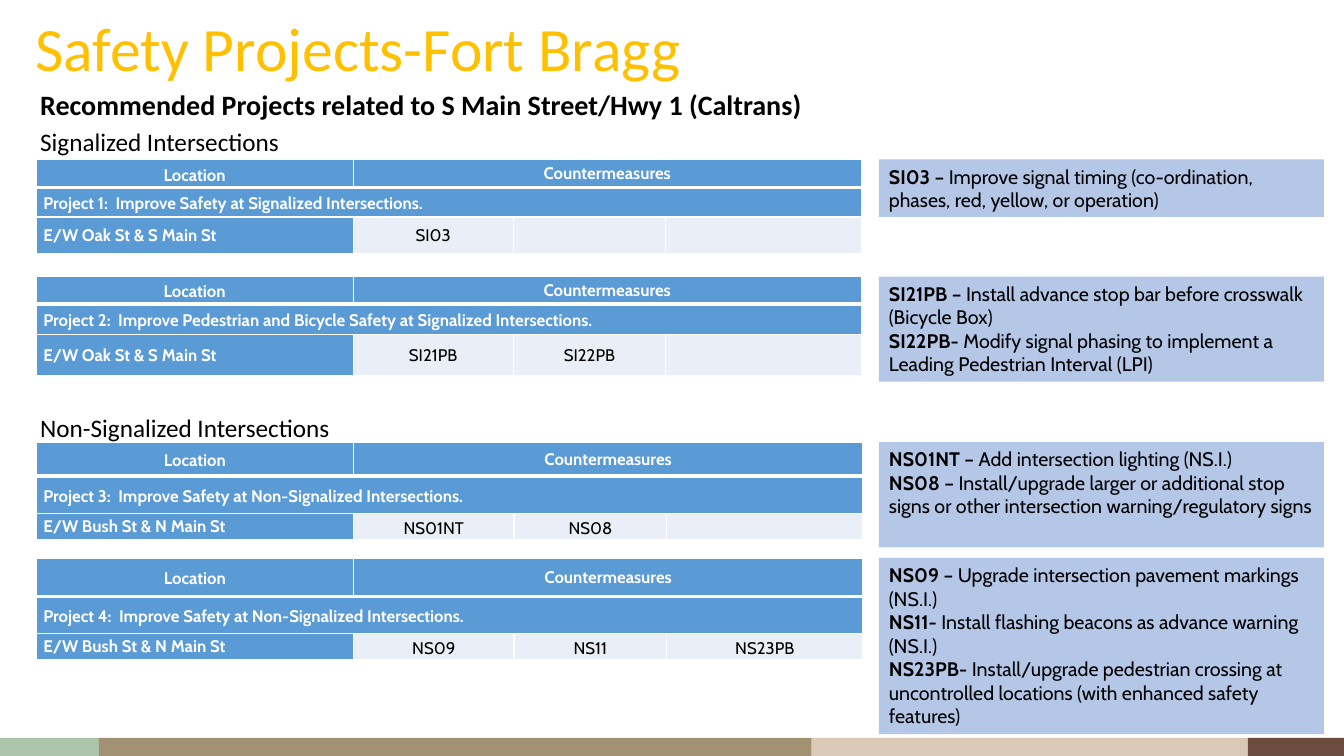
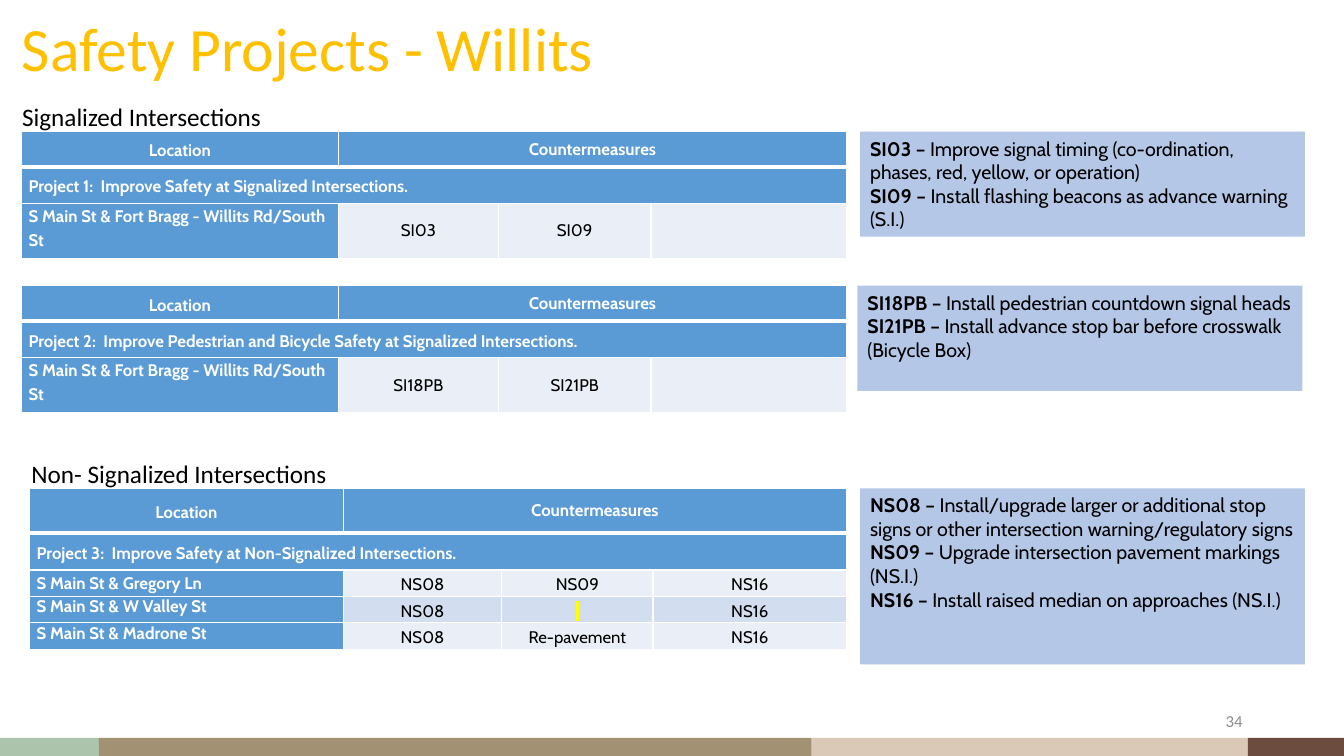
from dataclasses import dataclass
from itertools import pairwise

from lxml.etree import SubElement
from pptx import Presentation
from pptx.dml.color import RGBColor
from pptx.enum.shapes import MSO_SHAPE
from pptx.enum.text import MSO_ANCHOR, PP_ALIGN
from pptx.oxml.ns import qn
from pptx.util import Inches, Pt

SLIDE_W, SLIDE_H = Inches(13.33), Inches(7.5)
NBSP = chr(160)


@dataclass(frozen=True)
class Theme:
    heading_font: str = "Calibri"
    body_font: str = "Cabin"
    title: str = "FFC000"
    ink: str = "000000"
    white: str = "FFFFFF"
    muted: str = "8C8C8C"
    header: str = "5B9BD5"
    stripes: tuple = ("EAEFF7", "D2DEEF")
    note: str = "B4C7E7"
    marker: str = "FFFF00"
    bands: tuple = ("ACC4AC", "A29172", "DBC9B7", "6C4C3E")
    band_edges: tuple = (0, 7.35, 60.4, 92.85, 100)
    title_size: int = 44
    lead_size: int = 20
    label_size: int = 18
    note_size: int = 14
    small_size: int = 12
    columns: tuple = (0.384, 0.194, 0.185, 0.237)
    rule: int = 1
    header_rule: int = 3


T = Theme()


def x(percent):
    return round(SLIDE_W * percent / 100)


def y(percent):
    return round(SLIDE_H * percent / 100)


def box(left, top, width, height):
    """Turn shares of the slide, in percent, into lengths."""
    return x(left), y(top), x(width), y(height)


def rgb(value):
    return RGBColor.from_string(value)


def put_text(tf, paragraphs, *, size, color=T.ink, font=T.body_font, bold=False,
             align=PP_ALIGN.LEFT, spacing=1.0, highlight=None):
    """Fill a text frame; a (lead, text) pair becomes a bold lead and plain text."""
    tf.word_wrap = True
    for i, content in enumerate(paragraphs):
        p = tf.paragraphs[0] if i == 0 else tf.add_paragraph()
        p.alignment, p.line_spacing = align, spacing
        if isinstance(content, tuple):
            runs = zip(content, (True, False))
        else:
            runs = [(content, bold)]
        for text, is_bold in runs:
            r = p.add_run()
            r.text = text
            r.font.size, r.font.bold = Pt(size), is_bold
            r.font.color.rgb = rgb(color)
            if highlight:
                mark = SubElement(r.font._element, qn("a:highlight"))
                SubElement(mark, qn("a:srgbClr"), val=highlight)
            r.font.name = font


def add_label(s, text, place, *, size=T.label_size, anchor=MSO_ANCHOR.TOP, **fmt):
    tf = s.shapes.add_textbox(*box(*place)).text_frame
    put_text(tf, [text], size=size, font=T.heading_font, **fmt)
    tf.vertical_anchor = anchor


def add_rect(s, place, fill):
    sp = s.shapes.add_shape(MSO_SHAPE.RECTANGLE, *box(*place))
    sp.shadow.inherit = False
    sp.fill.solid()
    sp.fill.fore_color.rgb = rgb(fill)
    sp.line.fill.background()
    return sp


def add_note(s, left, top, height, items):
    tf = add_rect(s, (left, top, 33.1, height), T.note).text_frame
    put_text(tf, items, size=T.note_size)
    tf.vertical_anchor = MSO_ANCHOR.TOP


def set_borders(cell, top, bottom):
    tc_pr = cell._tc.get_or_add_tcPr()
    for side, width in zip("LRTB", (T.rule, T.rule, top, bottom)):
        ln = SubElement(tc_pr, qn(f"a:ln{side}"), w=str(Pt(width)))
        fill = SubElement(ln, qn("a:solidFill"))
        SubElement(fill, qn("a:srgbClr"), val=T.white)


def style_cell(cell, row, fill):
    set_borders(cell, T.header_rule if row == 1 else T.rule,
                T.header_rule if row == 0 else T.rule)
    cell.fill.solid()
    cell.fill.fore_color.rgb = rgb(fill)
    cell.margin_left = cell.margin_right = Inches(0.07)
    cell.margin_top = cell.margin_bottom = 0


def fill_cell(cell, text, *, anchor=MSO_ANCHOR.MIDDLE, **fmt):
    """Write a cell; an empty one only gets a small type size, to keep its row low."""
    cell.vertical_anchor = anchor
    if text:
        put_text(cell.text_frame, [text], size=T.small_size, **fmt)
    else:
        SubElement(cell.text_frame.paragraphs[0]._p, qn("a:endParaRPr"),
                   sz=str(T.small_size * 100))


def add_project(s, place, heights, title, sites, *, centred=False, code_spacing=1.15):
    """Add a project table; each site is a location and its three countermeasures."""
    left, top, width = place
    table = s.shapes.add_table(len(heights), len(T.columns),
                               *box(left, top, width, sum(heights))).table
    table.first_row = table.horz_banding = False
    for column, share in zip(table.columns, T.columns):
        column.width = x(width * share)
    for row, height in zip(table.rows, heights):
        row.height = y(height)

    heading = dict(color=T.white, bold=True)
    rows = [("Location", "Countermeasures", "", ""), (title, "", "", ""), *sites]
    for i, texts in enumerate(rows):
        for j, text in enumerate(texts):
            cell = table.cell(i, j)
            is_heading = i < 2 or j == 0
            style_cell(cell, i, T.header if is_heading else T.stripes[i % 2])
            if i == 0:
                fmt = dict(heading, align=PP_ALIGN.CENTER, spacing=1 if j else 1.15)
            elif i == 1:
                fmt = dict(heading, spacing=1.15)
            elif j == 0:
                fmt = dict(heading, spacing=1.15 if i == 2 and not centred else 1,
                           anchor=MSO_ANCHOR.MIDDLE if centred else MSO_ANCHOR.TOP)
            else:
                fmt = dict(align=PP_ALIGN.CENTER, spacing=code_spacing,
                           highlight=T.marker if text == NBSP else None)
            fill_cell(cell, text, **fmt)
    table.cell(0, 1).merge(table.cell(0, 3))
    table.cell(1, 0).merge(table.cell(1, 3))


def add_base(prs, title, left):
    """Start a slide with the footer bands and the title."""
    s = prs.slides.add_slide(prs.slide_layouts[6])
    for (start, end), color in zip(pairwise(T.band_edges), T.bands):
        add_rect(s, (start, 97.6, end - start, 2.4), color)
    add_label(s, title, (left, 0, 86.3, 13.7), size=T.title_size, color=T.title,
              spacing=0.9, anchor=MSO_ANCHOR.MIDDLE)
    return s


SIGNALIZED = "Improve Safety at Signalized Intersections."
PEDESTRIAN = "Improve Pedestrian and Bicycle Safety at Signalized Intersections."
NON_SIGNALIZED = "Improve Safety at Non-Signalized Intersections."
TIMING = ("SI03 – ",
          "Improve signal timing (co-ordination, phases, red, yellow, or operation)")
STOP_BAR = ("SI21PB – ", "Install advance stop bar before crosswalk (Bicycle Box)")
SIGNS = ("NS08 – ", "Install/upgrade larger or additional stop signs or other "
                    "intersection warning/regulatory signs")
MARKINGS = ("NS09 – ", "Upgrade intersection pavement markings (NS.I.)")


def add_fort_bragg(prs):
    s = add_base(prs, "Safety Projects-Fort Bragg", 1.9)
    add_label(s, "Recommended Projects related to S Main Street/Hwy 1 (Caltrans)",
              (2.25, 10.9, 60.9, 5.9), size=T.lead_size, bold=True)
    add_label(s, "Signalized Intersections", (2.25, 16.1, 44.5, 5.3))
    add_label(s, "Non-Signalized Intersections", (2.25, 53.9, 44.5, 5.3))

    oak, bush = "E/W Oak St & S Main St", "E/W Bush St & N Main St"
    tight = dict(centred=True, code_spacing=1)
    projects = [
        (21.1, 61.4, (3.7, 3.9, 4.9), SIGNALIZED, (oak, "SI03", "", ""), tight,
         7.6, [TIMING]),
        (36.6, 61.4, (3.6, 4.1, 5.4), PEDESTRIAN, (oak, "SI21PB", "SI22PB", ""), tight,
         13.9, [STOP_BAR, ("SI22PB- ", "Modify signal phasing to implement a "
                                       "Leading Pedestrian Interval (LPI)")]),
        (58.5, 61.5, (4.5, 4.9, 3.5), NON_SIGNALIZED, (bush, "NS01NT", "NS08", ""), {},
         13.9, [("NS01NT – ", "Add intersection lighting (NS.I.)"), SIGNS]),
        (73.8, 61.5, (5.1, 4.9, 3.5), NON_SIGNALIZED, (bush, "NS09", "NS11", "NS23PB"), {},
         23.3, [MARKINGS,
                ("NS11- ", "Install flashing beacons as advance warning (NS.I.)"),
                ("NS23PB- ", "Install/upgrade pedestrian crossing at uncontrolled "
                             "locations (with enhanced safety features)")]),
    ]
    for n, (top, width, heights, aim, site, fmt, note_height, notes) in enumerate(projects, 1):
        add_project(s, (2.7, top, width), heights, f"Project {n}:  {aim}", [site], **fmt)
        add_note(s, 65.4, top, note_height, notes)


def add_willits(prs):
    s = add_base(prs, "Safety Projects - Willits", 0.9)
    add_label(s, "Signalized Intersections", (0.9, 12.7, 44.5, 5.3))
    add_label(s, "Non- Signalized Intersections", (1.6, 60, 44.5, 5.3))
    add_label(s, "34", (70.7, 92.7, 22.5, 5.3), size=T.small_size, color=T.muted,
              align=PP_ALIGN.RIGHT, anchor=MSO_ANCHOR.MIDDLE)

    south = "S Main St & Fort Bragg - Willits Rd/South St"
    low, tall = (4.7, 4.8, 7.3), (5.9, 4.9, 3.5, 3.5, 3.5)
    projects = [
        ((1.6, 17.4, 61.4), low, SIGNALIZED, [(south, "SI03", "SI09", "")], 1,
         64, 13.9, [TIMING,
                    ("SI09 – ", "Install flashing beacons as advance warning (S.I.)")]),
        ((1.6, 37.8, 61.4), low, PEDESTRIAN, [(south, "SI18PB", "SI21PB", "")], 1,
         63.8, 13.9, [("SI18PB – ", "Install pedestrian countdown signal heads"), STOP_BAR]),
        ((2.2, 64.6, 60.8), tall, NON_SIGNALIZED,
         [("S Main St & Gregory Ln", "NS08", "NS09", "NS16"),
          ("S Main St & W Valley St", "NS08", NBSP, "NS16"),
          ("S Main St & Madrone St", "NS08", "Re-pavement", "NS16")], 1.15,
         64, 23.3, [SIGNS, MARKINGS,
                    ("NS16 – ", "Install raised median on approaches (NS.I.)")]),
    ]
    for n, (place, heights, aim, sites, spacing, left, note_height, notes) in enumerate(projects, 1):
        add_project(s, place, heights, f"Project {n}:  {aim}", sites, code_spacing=spacing)
        add_note(s, left, place[1], note_height, notes)


def main():
    prs = Presentation()
    prs.slide_width, prs.slide_height = SLIDE_W, SLIDE_H
    add_fort_bragg(prs)
    add_willits(prs)
    prs.save("out.pptx")


if __name__ == "__main__":
    main()
